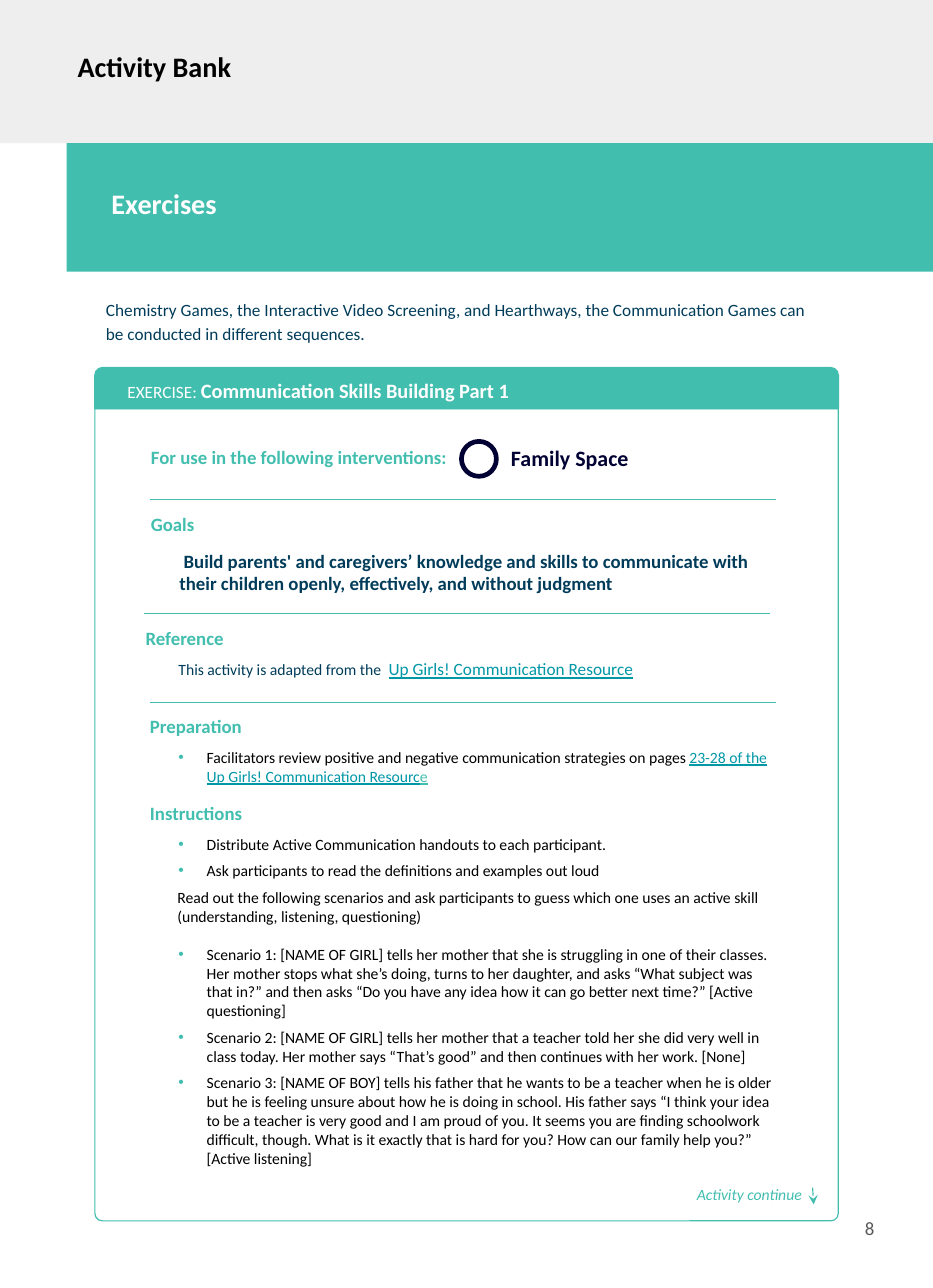
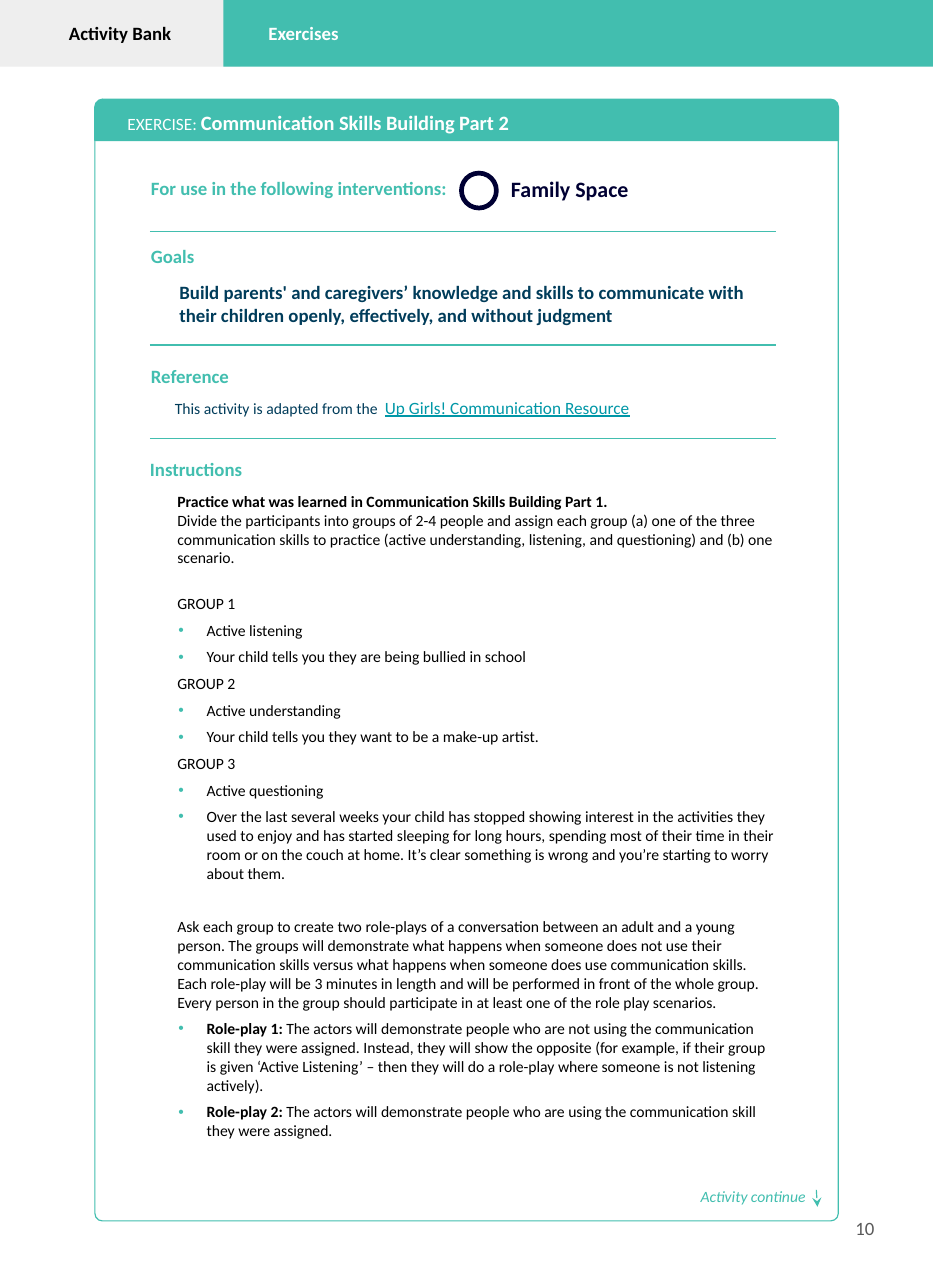
from lxml import etree
from pptx import Presentation
from pptx import util as u
from pptx.dml import color
from pptx.enum import shapes, text
from pptx.oxml import ns

Pt = u.Pt
WIDTH, HEIGHT = 595.44, 822.24
CARD_LEFT, CARD_WIDTH, CARD_BOTTOM = 60.6, 474.4, 779.4
HEADER_HEIGHT = 26.2
BODY_LEFT, BODY_WIDTH = 113.2, 382.3
HEADING_LEFT = 95.6
LINE_GAP = 12.2  # height of one line of 10 pt text


class Handbook:
    """Shared style, plus the slide being drawn."""
    font = "Calibri"
    colours = {"teal": "42BEAF", "grey": "EEEEEE", "navy": "003C5A",
               "ink": "000033", "link": "0097A7", "black": "000000",
               "white": "FFFFFF", "folio": "595959"}

    def __init__(self):
        self.presentation = Presentation()
        self.presentation.slide_width = Pt(WIDTH)
        self.presentation.slide_height = Pt(HEIGHT)
        self.slide = None

    def rgb(self, name):
        return color.RGBColor.from_string(self.colours[name])

    def new_slide(self):
        layout = self.presentation.slide_layouts[6]
        self.slide = self.presentation.slides.add_slide(layout)

    # Basic elements
    def shape(self, kind, left, top, width, height, fill=None, line=None, weight=0.75):
        shape = self.slide.shapes.add_shape(kind, Pt(left), Pt(top), Pt(width), Pt(height))
        shape.shadow.inherit = False
        if fill:
            shape.fill.solid()
            shape.fill.fore_color.rgb = self.rgb(fill)
        else:
            shape.fill.background()
        if line:
            shape.line.color.rgb = self.rgb(line)
            shape.line.width = Pt(weight)
        else:
            shape.line.fill.background()
        return shape

    def band(self, left, top, width, height, fill):
        self.shape(shapes.MSO_SHAPE.RECTANGLE, left, top, width, height, fill)

    def line(self, x1, y1, x2, y2, arrow=False):
        connector = self.slide.shapes.add_connector(
            shapes.MSO_CONNECTOR.STRAIGHT, Pt(x1), Pt(y1), Pt(x2), Pt(y2))
        connector.line.color.rgb = self.rgb("teal")
        connector.line.width = Pt(0.75)
        if arrow:
            etree.SubElement(connector.line._get_or_add_ln(), ns.qn("a:tailEnd"), type="stealth")
        etree.SubElement(connector._element.spPr, ns.qn("a:effectLst"))

    def text(self, left, top, width, height, paragraphs, insets=(0, 0.72, 0, 0),
             middle=False):
        shape = self.slide.shapes.add_textbox(Pt(left), Pt(top), Pt(width), Pt(height))
        frame = shape.text_frame
        frame.word_wrap = True
        (frame.margin_left, frame.margin_top,
         frame.margin_right, frame.margin_bottom) = map(Pt, insets)
        if middle:
            frame.vertical_anchor = text.MSO_ANCHOR.MIDDLE
        for index, settings in enumerate(paragraphs):
            paragraph = frame.paragraphs[0] if index == 0 else frame.add_paragraph()
            self.fill_paragraph(paragraph, **settings)

    def fill_paragraph(self, paragraph, runs, before=0, after=0, spacing=None,
                       align=None, bullet=False, indent=0):
        paragraph.space_before, paragraph.space_after = Pt(before), Pt(after)
        if spacing:
            paragraph.line_spacing = spacing
        if align:
            paragraph.alignment = align
        properties = paragraph._p.get_or_add_pPr()
        properties.set("marL", str(Pt(18.7 if bullet else indent)))
        properties.set("indent", str(Pt(-18 if bullet else 0)))
        if bullet:
            bullet_colour = etree.SubElement(properties, ns.qn("a:buClr"))
            etree.SubElement(bullet_colour, ns.qn("a:srgbClr"), val=self.colours["teal"])
            etree.SubElement(properties, ns.qn("a:buFont"), typeface="Arial")
            etree.SubElement(properties, ns.qn("a:buChar"), char="•")
        for words, size, colour, style in runs:
            run = paragraph.add_run()
            run.text = words
            run.font.name, run.font.size = self.font, Pt(size)
            run.font.color.rgb = self.rgb(colour)
            run.font.bold = "b" in style
            run.font.italic = "i" in style
            run.font.underline = "u" in style

    # Page parts
    def label(self, left, top, width, height, words, size, colour, style="",
              align=None, middle=False):
        self.text(left, top, width, height,
                  [{"runs": [(words, size, colour, style)], "align": align}],
                  insets=(7.2,) * 4, middle=middle)

    def heading(self, top, words, left=HEADING_LEFT):
        self.text(left, top, 214, 16,
                  [{"runs": [(words, 12, "teal", "b")], "indent": 0.72}])

    def rule(self, top, left=HEADING_LEFT):
        self.line(left, top, left + 399.4, top)

    def body(self, top, height, paragraphs):
        self.text(BODY_LEFT, top, BODY_WIDTH, height, paragraphs,
                  insets=(0, 5.76, 0, 0))

    def card(self, top, title, goal):
        rounded = shapes.MSO_SHAPE.ROUND_2_SAME_RECTANGLE
        # Frame and header
        body_top = top + HEADER_HEIGHT
        frame = self.shape(rounded, CARD_LEFT, body_top, CARD_WIDTH,
                           CARD_BOTTOM - body_top, "white", "teal")
        frame.adjustments[0], frame.adjustments[1] = 0, 0.01
        header = self.shape(rounded, CARD_LEFT, top, CARD_WIDTH, HEADER_HEIGHT,
                            "teal", "teal", 1)
        header.adjustments[0] = 0.19
        self.text(80.6, top - 0.7, 347.8, 30.2, [{"indent": 0.72, "runs": [
            ("EXERCISE: ", 11, "white", ""), (title, 13, "white", "b")]}], middle=True)
        # Interventions
        self.heading(top + 49, "For use in the following interventions:")
        self.text(318.2, top + 49.2, 95, 22.3,
                  [{"runs": [("Family Space", 14, "ink", "b")], "spacing": 0.75}],
                  insets=(7.92, 3.6, 7.92, 3.6))
        self.shape(shapes.MSO_SHAPE.OVAL, 294.5, top + 47.1, 22.3, 22.3, "white", "ink", 3)
        self.rule(top + 84.2)
        # Goals
        self.heading(top + 92.2, "Goals")
        self.text(113.8, top + 115.2, BODY_WIDTH, 30.2,
                  [{"runs": [(goal, 12, "navy", "b")], "indent": 0.72}])

    def reference(self, top, left):
        self.text(left, top, BODY_WIDTH, 14.4, [{"indent": 0.72, "runs": [
            ("This activity is adapted from the ", 10, "navy", ""),
            (" ", 11, "navy", ""),
            ("Up Girls! Communication Resource", 11, "link", "u")]}])

    def footer(self, number, left, top):
        self.label(left, top, 95, 26.6, "Activity continue", 10, "teal", "i")
        self.line(left + 81, top + 7.9, left + 81.7, top + 18.7, arrow=True)
        self.label(529.2, 752.4, 36, 62.6, number, 12, "folio",
                   align=text.PP_ALIGN.RIGHT, middle=True)


def plain(words, before=5, style=""):
    return {"runs": [(words, 10, "black", style)], "before": before}


def bullet(words, before=5, lead=None, after=0):
    runs = [(lead, 10, "black", "b")] if lead else []
    return {"runs": runs + [(words, 10, "black", "")], "before": before,
            "after": after, "bullet": True}


GOAL = ("Build parents' and caregivers’ knowledge and skills to communicate with "
        "their children openly, effectively, and without judgment")


def part_one(book):
    book.new_slide()
    # Title bands
    book.band(0, 0, WIDTH, 91.4, "grey")
    book.label(42.5, 24.5, 499, 41, "Activity Bank", 18, "black", "b")
    book.band(42.5, 91.4, WIDTH - 42.5, 82.1, "teal")
    book.label(64.1, 111.6, 499, 41, "Exercises", 18, "white", "b")
    book.text(60.5, 182.2, 474.5, 35.3, [{"spacing": 1.15, "before": 4, "runs": [(
        "Chemistry Games, the Interactive Video Screening, and Hearthways, the "
        "Communication Games can be conducted in different sequences.",
        11, "navy", "")]}], insets=(7.2,) * 4)
    # Card
    book.card(234.7, "Communication Skills Building Part 1", " " + GOAL)
    book.rule(391.7, left=92.2)
    book.heading(399.6, "Reference", left=92.2)
    book.reference(419.8, BODY_LEFT)
    book.rule(448.6)
    # Preparation
    book.heading(455.8, "Preparation", left=95)
    book.body(471.6, 29.5, [{"bullet": True, "after": 5, "runs": [
        ("Facilitators review positive and negative communication strategies on pages ",
         10, "black", ""),
        ("23-28 of the Up Girls! Communication Resourc", 10, "link", "u"),
        ("e", 10, "teal", "u")]}])
    # Instructions
    book.heading(511.2, "Instructions", left=95)
    book.body(527, 254, [
        bullet("Distribute Active Communication handouts to each participant.", 0),
        bullet("Ask participants to read the definitions and examples out loud"),
        plain("Read out the following scenarios and ask participants to guess which one "
              "uses an active skill (understanding, listening, questioning)"),
        bullet("Scenario 1: [NAME OF GIRL] tells her mother that she is struggling in one "
               "of their classes. Her mother stops what she’s doing, turns to her daughter, "
               "and asks “What subject was that in?” and then asks “Do you have any idea "
               "how it can go better next time?” [Active questioning]", LINE_GAP),
        bullet("Scenario 2: [NAME OF GIRL] tells her mother that a teacher told her she did "
               "very well in class today. Her mother says “That’s good” and then continues "
               "with her work. [None]"),
        bullet("Scenario 3: [NAME OF BOY] tells his father that he wants to be a teacher "
               "when he is older but he is feeling unsure about how he is doing in school. "
               "His father says “I think your idea to be a teacher is very good and I am "
               "proud of you. It seems you are finding schoolwork difficult, though. What "
               "is it exactly that is hard for you? How can our family help you?” "
               "[Active listening]"),
    ])
    book.footer("8", 437.6, 750.2)


def part_two(book):
    book.new_slide()
    # Title bands
    book.band(0, 0, 153.4, 42.5, "grey")
    book.label(0, 6.5, 153.4, 41, "Activity Bank", 12, "black", "b",
               align=text.PP_ALIGN.CENTER)
    book.band(142.6, 0, WIDTH - 142.6, 42.5, "teal")
    book.label(164.2, 6.5, 382.3, 41, "Exercises", 12, "white", "b")
    # Card
    book.card(63.4, "Communication Skills Building Part 2", GOAL)
    book.rule(220.3)
    book.heading(231.9, "Reference")
    book.reference(252.7, 110.9)
    book.rule(280.1)
    # Instructions
    book.heading(291.7, "Instructions", left=95)
    groups = [
        ("Active listening", "Your child tells you they are being bullied in school"),
        ("Active understanding", "Your child tells you they want to be a make-up artist."),
        ("Active questioning",
         "Over the last several weeks your child has stopped showing interest in the "
         "activities they used to enjoy and has started sleeping for long hours, spending "
         "most of their time in their room or on the couch at home. It’s clear something "
         "is wrong and you’re starting to worry about them."),
    ]
    paragraphs = [
        plain("Practice what was learned in Communication Skills Building Part 1.", 0, "b"),
        plain("Divide the participants into groups of 2-4 people and assign each group (a) "
              "one of the three communication skills to practice (active understanding, "
              "listening, and questioning) and (b) one scenario.", 0),
    ]
    for number, (skill, scenario) in enumerate(groups, 1):
        before = 5 + LINE_GAP if number == 1 else 5
        paragraphs += [plain(f"GROUP {number}", before), bullet(skill), bullet(scenario)]
    paragraphs += [
        plain("Ask each group to create two role-plays of a conversation between an adult "
              "and a young person. The groups will demonstrate what happens when someone "
              "does not use their communication skills versus what happens when someone "
              "does use communication skills. Each role-play will be 3 minutes in length "
              "and will be performed in front of the whole group. Every person in the group "
              "should participate in at least one of the role play scenarios.",
              10 + LINE_GAP),
        bullet("The actors will demonstrate people who are not using the communication "
               "skill they were assigned. Instead, they will show the opposite (for "
               "example, if their group is given ‘Active Listening’ – then they will do a "
               "role-play where someone is not listening actively).", lead="Role-play 1: "),
        bullet(" The actors will demonstrate people who are using the communication skill "
               "they were assigned.", lead="Role-play 2:", after=5),
    ]
    book.body(308.2, 422.6, paragraphs)
    book.footer("10", 440, 751.7)


def main():
    book = Handbook()
    part_one(book)
    part_two(book)
    book.presentation.save("out.pptx")


if __name__ == "__main__":
    main()
